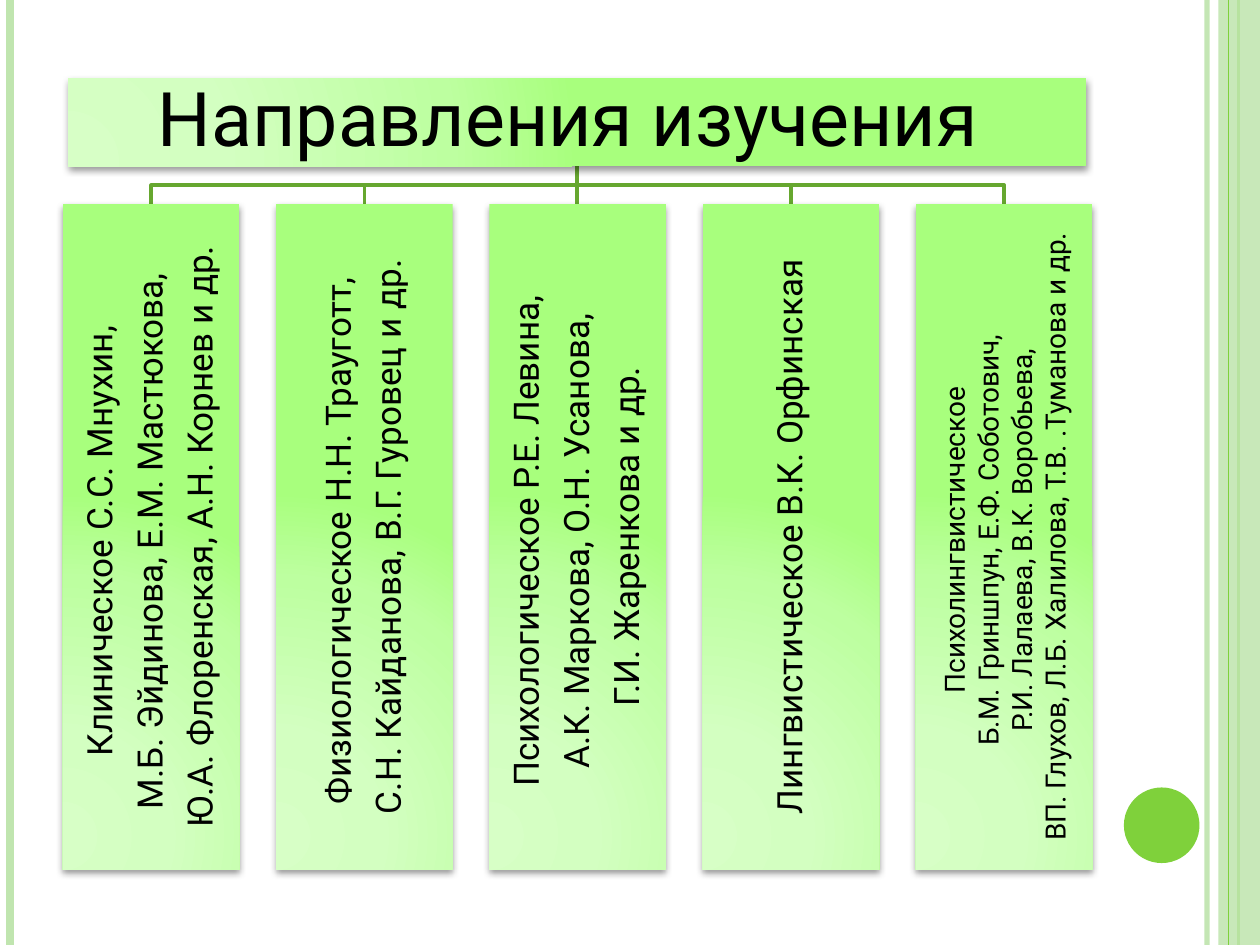
from lxml.etree import SubElement
from pptx import Presentation
from pptx.dml.color import RGBColor
from pptx.enum.shapes import MSO_CONNECTOR, MSO_SHAPE
from pptx.enum.text import MSO_ANCHOR, PP_ALIGN
from pptx.oxml import parse_xml
from pptx.oxml.ns import nsdecls, qn
from pptx.util import Inches, Pt

FONT = "Roboto"
GREEN, PALE, BRANCH = "7FD13B", "C0E5AF", "66A72F"
STOPS = [(0, "D7FFC6"), (30, "D3FFC1"), (75, "BDFFA0"), (100, "A8FF7D")]
RULES = [(9.58, PALE, 3, 93), (0.08, PALE, 4.5, 100), (9.83, GREEN, 1.5, 100)]
TITLE = "Направления изучения "
TITLE_BOX = (0.54, 0.62, 8.08, 0.7)
CENTRE, TITLE_BOTTOM, BRANCH_LEVEL = 4.58, 1.32, 1.47
FIRST_LEFT, LAST_LEFT = 0.5, 7.27
COLUMN_TOP, COLUMN_WIDTH, COLUMN_HEIGHT = 1.62, 1.4, 5.28
DIRECTIONS = [
    ["Клиническое С.С. Мнухин, ", "М.Б. Эйдинова, Е.М. Мастюкова, ",
     "Ю.А. Флоренская, А.Н. Корнев и др."],
    ["Физиологическое Н.Н. Трауготт, ", "С.Н. Кайданова, В.Г. Гуровец и др."],
    ["Психологическое Р.Е. Левина, ", "А.К. Маркова, О.Н. Усанова, ",
     "Г.И. Жаренкова и др."],
    ["Лингвистическое В.К. Орфинская"],
    ["Психолингвистическое ", "Б.М. Гриншпун, Е.Ф. Соботович, ",
     "Р.И. Лалаева, В.К. Воробьева, ",
     "ВП. Глухов, Л.Б. Халилова, Т.В. .Туманова и др."],
]


def color(value):
    """Return the colour of a hex string."""
    return RGBColor.from_string(value)


def set_alpha(element, percent):
    """Make the solid colour inside an element partly transparent."""
    if percent < 100:
        tone = next(element.iter(qn("a:srgbClr")))
        SubElement(tone, qn("a:alpha"), val=str(percent * 1000))


def add_line(page, start, end, tone, width, alpha=100):
    """Draw a straight line."""
    line = page.shapes.add_connector(
        MSO_CONNECTOR.STRAIGHT, *map(Inches, start + end))
    line.line.color.rgb = color(tone)
    line.line.width = Pt(width)
    properties = line._element.spPr
    set_alpha(properties, alpha)
    SubElement(properties, qn("a:effectLst"))


def add_plain_shape(page, kind, bounds, tone, alpha=100):
    """Draw a flat shape without an outline."""
    shape = page.shapes.add_shape(kind, *map(Inches, bounds))
    shape.shadow.inherit = False
    shape.fill.solid()
    shape.fill.fore_color.rgb = color(tone)
    shape.line.fill.background()
    set_alpha(shape._element.spPr, alpha)
    return shape


def add_branch(page, target):
    """Draw the elbow from the title down to a column."""
    if abs(target - CENTRE) < 0.01:
        add_line(page, (CENTRE, TITLE_BOTTOM), (CENTRE, COLUMN_TOP), BRANCH, 2)
        return
    builder = page.shapes.build_freeform(
        Inches(CENTRE), Inches(TITLE_BOTTOM), scale=1.0)
    points = [(CENTRE, BRANCH_LEVEL), (target, BRANCH_LEVEL), (target, COLUMN_TOP)]
    builder.add_line_segments(
        [(Inches(x), Inches(y)) for x, y in points], close=False)
    branch = builder.convert_to_shape()
    branch.shadow.inherit = False
    branch.fill.background()
    branch.line.color.rgb = color(BRANCH)
    branch.line.width = Pt(2)


def add_glow(shape):
    """Give a shape the round green gradient and the soft shadow."""
    properties = shape._element.spPr
    stops = "".join(
        f'<a:gs pos="{place * 1000}"><a:srgbClr val="{tone}"/></a:gs>'
        for place, tone in STOPS)
    gradient = parse_xml(
        f'<a:gradFill {nsdecls("a")} rotWithShape="1"><a:gsLst>{stops}</a:gsLst>'
        '<a:path path="circle"><a:fillToRect l="5000" t="100000" r="120000" '
        'b="10000"/></a:path></a:gradFill>')
    properties.replace(properties.find(qn("a:solidFill")), gradient)
    shadow = SubElement(
        properties.find(qn("a:effectLst")), qn("a:outerShdw"),
        blurRad=str(Pt(4)), dist=str(Pt(2)), dir="5400000", rotWithShape="0")
    tone = SubElement(shadow, qn("a:srgbClr"), val="000000")
    SubElement(tone, qn("a:alpha"), val="40000")


def add_panel(page, bounds, lines, size, inset, upright=False, spaced=True):
    """Draw a green panel with centred lines of text."""
    panel = add_plain_shape(page, MSO_SHAPE.RECTANGLE, bounds, STOPS[-1][1])
    add_glow(panel)
    frame = panel.text_frame
    frame.text = "\n".join(lines)
    frame.word_wrap = True
    frame.vertical_anchor = MSO_ANCHOR.MIDDLE
    frame.margin_left = frame.margin_right = Inches(inset)
    frame.margin_top = frame.margin_bottom = Inches(inset)
    if upright:
        frame._txBody.bodyPr.set("vert", "vert270")
    for paragraph in frame.paragraphs:
        paragraph.alignment = PP_ALIGN.CENTER
        if spaced:
            paragraph.line_spacing = 0.9
            after = SubElement(paragraph._p.get_or_add_pPr(), qn("a:spcAft"))
            SubElement(after, qn("a:spcPct"), val="35000")
        for span in paragraph.runs:
            span.font.name = FONT
            span.font.size = Pt(size)
            span.font.color.rgb = color("000000")


def add_frame(page):
    """Draw the side rules, the right band and the green dot."""
    for x, tone, width, alpha in RULES:
        add_line(page, (x, 0), (x, 7.5), tone, width, alpha)
    add_plain_shape(page, MSO_SHAPE.RECTANGLE, (9.67, 0, 0.33, 7.5), PALE, 87)
    add_line(page, (9.75, 0), (9.75, 7.5), GREEN, 0.75)
    add_plain_shape(page, MSO_SHAPE.OVAL, (8.92, 6.25, 0.6, 0.6), GREEN)


def main():
    """Build the slide and save it."""
    deck = Presentation()
    deck.slide_width, deck.slide_height = Inches(10), Inches(7.5)
    page = deck.slides.add_slide(deck.slide_layouts[6])
    add_frame(page)
    step = (LAST_LEFT - FIRST_LEFT) / (len(DIRECTIONS) - 1)
    lefts = [FIRST_LEFT + step * index for index in range(len(DIRECTIONS))]
    for left in reversed(lefts):
        add_branch(page, left + COLUMN_WIDTH / 2)
    add_panel(page, TITLE_BOX, [TITLE], 43, 0.03)
    for left, lines in zip(lefts, DIRECTIONS):
        dense = len(lines) > 3
        add_panel(page, (left, COLUMN_TOP, COLUMN_WIDTH, COLUMN_HEIGHT), lines,
                  16 if dense else 20, 0.01, upright=True, spaced=not dense)
    deck.save("out.pptx")


if __name__ == "__main__":
    main()
